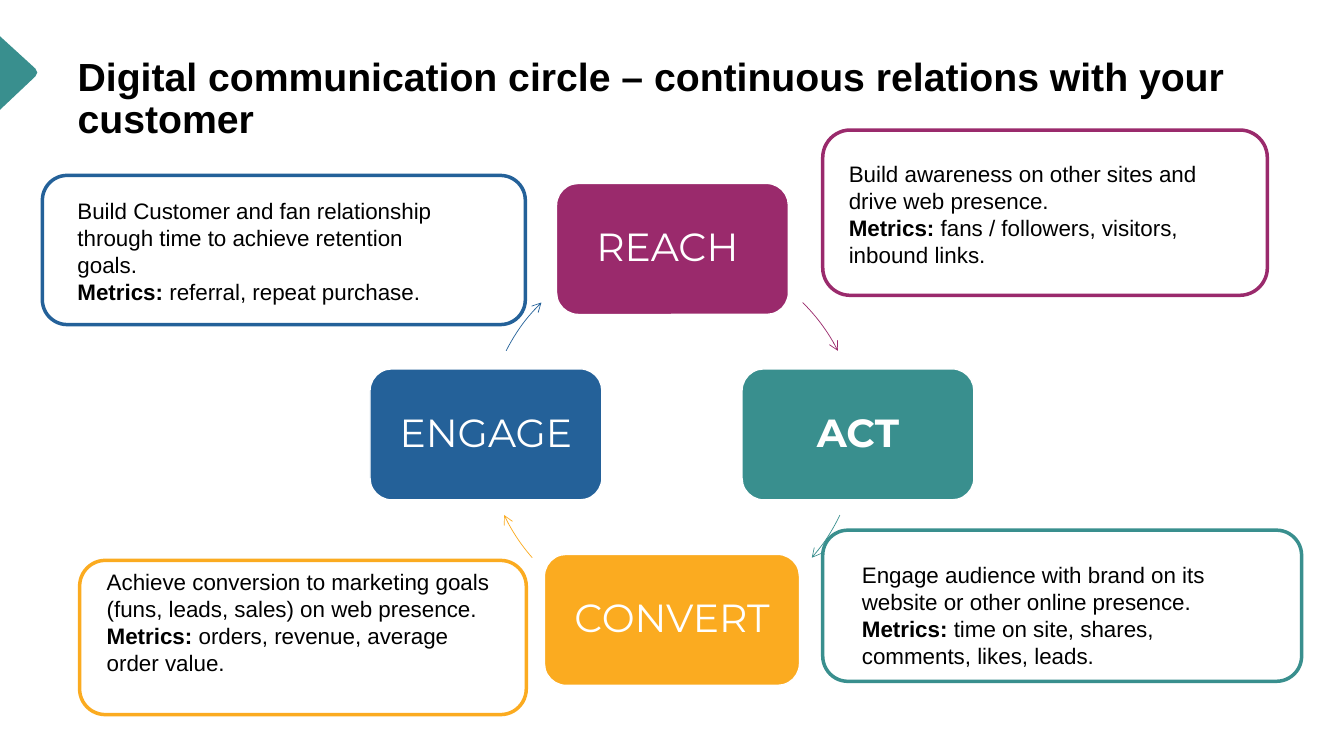
from dataclasses import dataclass

from lxml.etree import SubElement
from pptx import Presentation
from pptx.dml.color import RGBColor
from pptx.enum.shapes import MSO_SHAPE
from pptx.enum.text import MSO_ANCHOR, MSO_AUTO_SIZE, PP_ALIGN
from pptx.oxml.ns import qn
from pptx.util import Emu, Pt

PX = 9144
METRICS = "Metrics: "


@dataclass(frozen=True)
class Theme:
    plum: str = "9A2A6C"
    teal: str = "398F8E"
    amber: str = "FBAB20"
    blue: str = "246199"
    ink: str = "000000"
    paper: str = "FFFFFF"
    body_font: str = "Arial"
    card_font: str = "Montserrat"
    heading_size: int = 28
    caption_size: int = 16
    line_spacing: float = 0.9
    card_inset: int = 18


class CircleSlide:
    def __init__(self, deck, theme):
        self.theme = theme
        self.slide = deck.slides.add_slide(deck.slide_layouts[5])

    def format_span(self, span, size, font, color, bold):
        span.font.size = Pt(size)
        span.font.name = font
        span.font.bold = bold
        span.font.color.rgb = RGBColor.from_string(color)

    def add_preset(self, preset, bounds, fill=None, line=None, width=1):
        shape = self.slide.shapes.add_shape(preset, *(Emu(n * PX) for n in bounds))
        self.paint(shape, fill, line, width)
        return shape

    def paint(self, shape, fill, line, width=1):
        shape.shadow.inherit = False
        if fill:
            shape.fill.solid()
            shape.fill.fore_color.rgb = RGBColor.from_string(fill)
        else:
            shape.fill.background()
        if line:
            shape.line.color.rgb = RGBColor.from_string(line)
            shape.line.width = Pt(width)
        else:
            shape.line.fill.background()

    def add_marker(self, points, color):
        builder = self.slide.shapes.build_freeform(*points[0], scale=PX)
        builder.add_line_segments(points[1:], close=True)
        self.paint(builder.convert_to_shape(), color, None)

    def add_title(self, text, bounds):
        title = self.slide.shapes.title
        title.left, title.top, title.width, title.height = (Emu(n * PX) for n in bounds)
        frame = title.text_frame
        frame.text = text
        frame.word_wrap = True
        frame.auto_size = MSO_AUTO_SIZE.NONE
        frame.vertical_anchor = MSO_ANCHOR.TOP
        para = frame.paragraphs[0]
        para.alignment = PP_ALIGN.LEFT
        para.line_spacing = self.theme.line_spacing
        self.format_span(para.runs[0], self.theme.heading_size,
                         self.theme.body_font, self.theme.ink, True)

    def add_card(self, text, bounds, color, bold):
        card = self.add_preset(MSO_SHAPE.ROUNDED_RECTANGLE, bounds, color, self.theme.paper)
        frame = card.text_frame
        frame.text = text
        frame.word_wrap = True
        frame.vertical_anchor = MSO_ANCHOR.MIDDLE
        inset = Emu(self.theme.card_inset * PX)
        frame.margin_left = frame.margin_right = inset
        frame.margin_top = frame.margin_bottom = inset
        para = frame.paragraphs[0]
        para.alignment = PP_ALIGN.CENTER
        para.line_spacing = self.theme.line_spacing
        self.format_span(para.runs[0], self.theme.heading_size,
                         self.theme.card_font, self.theme.paper, bold)

    def add_arc_arrow(self, bounds, angles, color):
        arc = self.add_preset(MSO_SHAPE.ARC, bounds, None, color, 0.5)
        for index, degrees in enumerate(angles):
            arc.adjustments[index] = degrees * 0.6
        outline = arc.line._get_or_add_ln()
        SubElement(outline, qn("a:tailEnd"), type="arrow")

    def add_caption(self, bounds, paragraphs):
        box = self.slide.shapes.add_textbox(*(Emu(n * PX) for n in bounds))
        frame = box.text_frame
        frame.word_wrap = True
        for index, texts in enumerate(paragraphs):
            para = frame.paragraphs[0] if index == 0 else frame.add_paragraph()
            for text in texts:
                span = para.add_run()
                span.text = text
                self.format_span(span, self.theme.caption_size, self.theme.body_font,
                                 self.theme.ink, text == METRICS)

    def add_frame(self, bounds, color):
        self.add_preset(MSO_SHAPE.ROUNDED_RECTANGLE, bounds, None, color, 2.5)


def main():
    theme = Theme()
    deck = Presentation()
    deck.slide_width, deck.slide_height = Emu(1333 * PX), Emu(750 * PX)
    page = CircleSlide(deck, theme)

    page.add_marker([(0, 36), (35, 68), (36, 70), (37, 72), (36, 74), (35, 76), (0, 109)],
                    theme.teal)
    page.add_title("Digital communication circle – continuous relations with your customer",
                   (67, 52, 1200, 101))

    circle = (482, 247, 369, 369)
    stages = [
        ("REACH ", (552, 182, 230, 130), theme.plum, False, (314.6, 333.1)),
        ("ACT", (736, 366, 230, 130), theme.teal, True, (25.5, 41.3)),
        ("CONVERT", (540, 550, 253, 130), theme.amber, False, (138.7, 154.5)),
        ("ENGAGE", (367, 366, 230, 130), theme.blue, False, (206.9, 225.4)),
    ]
    for text, bounds, color, bold, angles in stages:
        page.add_card(text, bounds, color, bold)
        page.add_arc_arrow(circle, angles, color)

    captions = [
        ((832, 154, 405, 118), (816, 129, 441, 164), theme.plum,
         [["Build awareness on other sites and drive web presence."],
          [METRICS, "fans / followers, visitors, inbound links."]]),
        ((845, 552, 421, 118), (816, 526, 475, 150), theme.teal,
         [["Engage audience with brand on its website or other online presence. ",
           METRICS, "time on site, shares, comments, likes, leads."]]),
        ((96, 559, 401, 118), (79, 556, 443, 153), theme.amber,
         [["Achieve conversion to marketing goals (funs, leads, sales) on web presence. ",
           METRICS, "orders, revenue, average order value."]]),
        ((67, 191, 403, 118), (42, 174, 479, 148), theme.blue,
         [["Build Customer and fan relationship through time to achieve retention goals."],
          [METRICS, "referral, repeat purchase."]]),
    ]
    for text_bounds, frame_bounds, color, paragraphs in captions:
        page.add_caption(text_bounds, paragraphs)
        page.add_frame(frame_bounds, color)

    deck.save("out.pptx")


if __name__ == "__main__":
    main()
